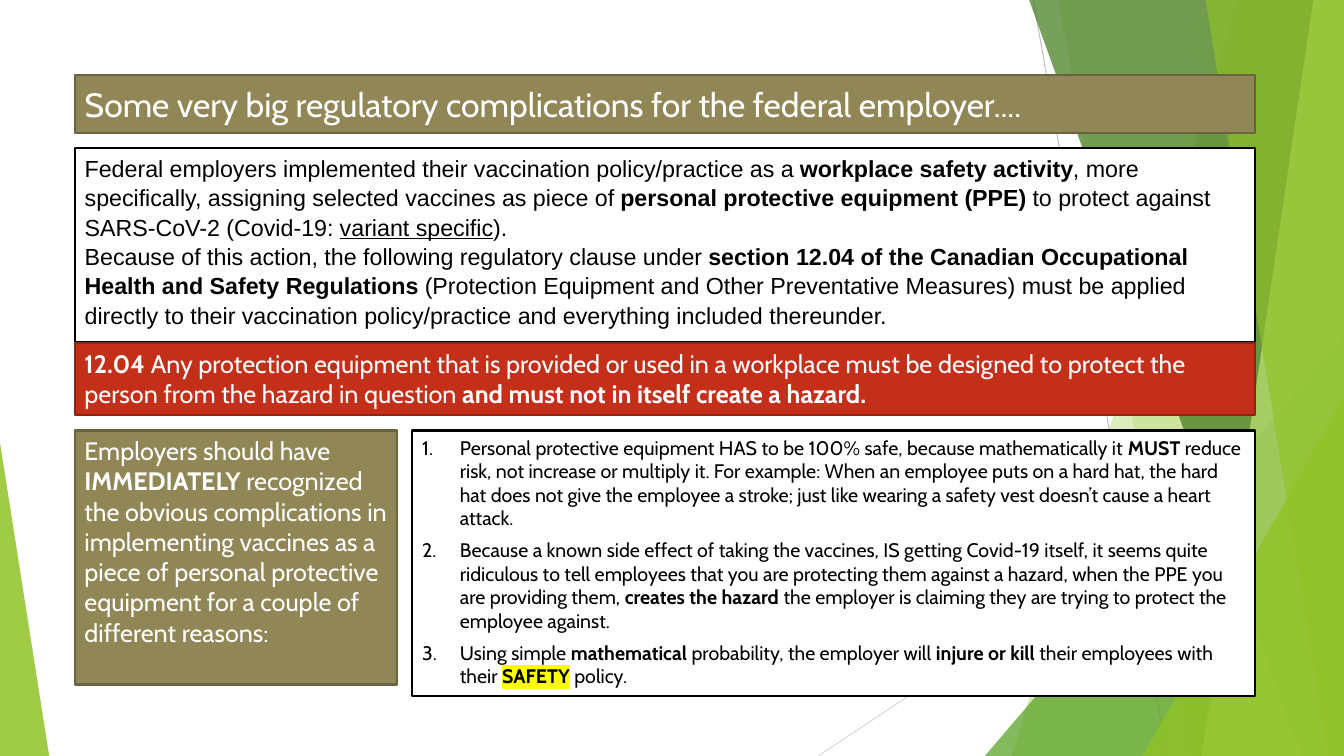
import copy

from lxml import etree
from pptx import Presentation
from pptx import util as u
from pptx.dml.color import RGBColor
from pptx.enum import shapes, text
from pptx.oxml.ns import qn

WHITE = RGBColor(0xFF, 0xFF, 0xFF)
BLACK = RGBColor(0x00, 0x00, 0x00)
OLIVE = RGBColor(0x91, 0x86, 0x55)
DARK_OLIVE = RGBColor(0x6B, 0x63, 0x3F)
RED = RGBColor(0xC4, 0x2F, 0x1A)
DARK_RED = RGBColor(0x91, 0x23, 0x13)
LIME = RGBColor(0x90, 0xC2, 0x26)
PALE_LIME = RGBColor(0xC0, 0xE4, 0x74)
GREEN = RGBColor(0x54, 0xA0, 0x21)
DARK_GREEN = RGBColor(0x3F, 0x78, 0x19)
GREY = RGBColor(0xBF, 0xBF, 0xBF)
LIGHT_GREY = RGBColor(0xD9, 0xD9, 0xD9)

SLIDE_W, SLIDE_H = 33.87, 19.05
LEFT, FULL_W = 1.88, 29.74
LOWER_TOP, REASONS_LEFT = 10.85, 10.39
BREAK = "\n"


class SlideBuilder:
    """Holds the slide and its style; lengths are in centimetres."""

    font = "Cabin"
    border = u.Pt(1.5)

    def __init__(self, slide):
        self.slide = slide
        self.shapes = slide.shapes

    # Background decoration
    def hairline(self, x1, y1, x2, y2, color):
        line = self.shapes.add_connector(
            shapes.MSO_CONNECTOR.STRAIGHT, u.Cm(x1), u.Cm(y1), u.Cm(x2), u.Cm(y2))
        line.line.color.rgb = color
        line.line.width = u.Pt(0.75)
        etree.SubElement(line._element.spPr, qn("a:effectLst"))

    def tint(self, shape, color, opacity):
        shape.fill.solid()
        shape.fill.fore_color.rgb = color
        shape.line.fill.background()
        shape.shadow.inherit = False
        rgb = shape._element.spPr.find(".//" + qn("a:srgbClr"))
        etree.SubElement(rgb, qn("a:alpha"), val=str(opacity * 1000))

    def band(self, top_x, bottom_x, color, opacity):
        """Fill from a slanted left edge to the right side of the slide."""
        outline = self.shapes.build_freeform(u.Cm(top_x), u.Cm(-0.02))
        corners = [(SLIDE_W, -0.02), (SLIDE_W, SLIDE_H), (bottom_x, SLIDE_H)]
        outline.add_line_segments([(u.Cm(x), u.Cm(y)) for x, y in corners])
        self.tint(outline.convert_to_shape(), color, opacity)

    def corner(self, left, top, width, apex, color, opacity):
        """Triangle standing on the bottom edge of the slide."""
        triangle = self.shapes.add_shape(
            shapes.MSO_SHAPE.ISOSCELES_TRIANGLE,
            u.Cm(left), u.Cm(top), u.Cm(width), u.Cm(SLIDE_H - top))
        triangle.adjustments[0] = apex
        self.tint(triangle, color, opacity)

    # Text panels
    def panel(self, left, top, width, height, fill, line, placeholder=None):
        box = [u.Cm(v) for v in (left, top, width, height)]
        if placeholder is None:
            panel = self.shapes.add_shape(shapes.MSO_SHAPE.RECTANGLE, *box)
            panel.shadow.inherit = False
        else:
            panel = placeholder
            panel.left, panel.top, panel.width, panel.height = box
            self.shapes._spTree.append(panel._element)  # above the decoration
        panel.fill.solid()
        panel.fill.fore_color.rgb = fill
        panel.line.color.rgb = line
        panel.line.width = self.border
        frame = panel.text_frame
        frame.word_wrap = True
        frame.auto_size = text.MSO_AUTO_SIZE.NONE
        frame.vertical_anchor = text.MSO_ANCHOR.TOP
        return frame

    def fill_text(self, paragraph, pieces, size, color, font=None):
        """Each piece is plain text, a (text, style) pair or a line break."""
        paragraph.alignment = text.PP_ALIGN.LEFT
        for piece in pieces:
            if piece == BREAK:
                paragraph.add_line_break()
                paragraph._p[-1].append(copy.deepcopy(run._r.rPr))
                continue
            words, style = (piece, "") if isinstance(piece, str) else piece
            run = paragraph.add_run()
            run.text = words
            run.font.name = font or self.font
            run.font.size = u.Pt(size)
            run.font.color.rgb = color
            run.font.bold = style in ("bold", "marked")
            if style == "underlined":
                run.font.underline = True
            if style == "marked":
                self.highlight(run)

    def highlight(self, run):
        mark = etree.Element(qn("a:highlight"))
        etree.SubElement(mark, qn("a:srgbClr"), val="FFFF00")
        run._r.rPr.find(qn("a:solidFill")).addnext(mark)

    def bullet(self, paragraph, indent=0.0, **numbering):
        props = paragraph._p.get_or_add_pPr()
        props.set("marL", str(u.Cm(indent)))
        props.set("indent", str(-u.Cm(indent)))
        etree.SubElement(props, qn("a:buAutoNum" if numbering else "a:buNone"), **numbering)


def main():
    deck = Presentation()
    deck.slide_width, deck.slide_height = u.Cm(SLIDE_W), u.Cm(SLIDE_H)
    slide = deck.slides.add_slide(deck.slide_layouts[1])
    page = SlideBuilder(slide)

    # Green facets
    page.hairline(26.04, 0, 29.41, SLIDE_H, GREY)
    page.hairline(SLIDE_W, 10.24, 20.62, SLIDE_H, LIGHT_GREY)
    page.band(31.19, 25.5, LIME, 30)
    page.band(26.67, 30.05, LIME, 20)
    page.corner(24.82, 8.46, 9.05, 1, GREEN, 72)
    page.band(25.93, 32.79, DARK_GREEN, 70)
    page.band(33.1, 30.28, PALE_LIME, 70)
    page.band(30.38, 33.48, LIME, 65)
    page.corner(28.8, 9.98, 5.07, 1, LIME, 80)
    page.corner(0, 11.15, 1.24, 0, LIME, 85)

    # Background of the policy
    policy = page.panel(LEFT, 3.73, FULL_W, 4.9, WHITE, BLACK, slide.placeholders[1])
    policy_text = policy.paragraphs[0]
    page.fill_text(policy_text, [
        "Federal employers implemented their vaccination policy/practice as a ",
        ("workplace safety activity", "bold"),
        ", more specifically, assigning selected vaccines as piece of ",
        ("personal protective equipment (PPE) ", "bold"),
        "to protect against SARS-CoV-2 (Covid-19: ",
        ("variant specific", "underlined"),
        ").",
        BREAK,
        "Because of this action, the following regulatory clause under ",
        ("section 12.04 of the Canadian Occupational Health and Safety Regulations", "bold"),
        " (Protection Equipment and Other Preventative Measures) must be applied directly "
        "to their vaccination policy/practice and everything included thereunder.",
    ], 16.6, BLACK, "Arial")
    policy_text.space_before = u.Pt(10)
    policy_text.line_spacing = 1.05
    page.bullet(policy_text)

    # Title
    title = page.panel(LEFT, 1.88, FULL_W, 1.47, OLIVE, DARK_OLIVE, slide.shapes.title)
    title.vertical_anchor = text.MSO_ANCHOR.MIDDLE
    page.fill_text(title.paragraphs[0], [
        "Some very big regulatory complications for the federal employer....",
    ], 24, WHITE)

    # Regulatory clause
    clause = page.panel(LEFT, 8.65, FULL_W, 1.81, RED, DARK_RED)
    page.fill_text(clause.paragraphs[0], [
        ("12.04", "bold"),
        " Any protection equipment that is provided or used in a workplace must be "
        "designed to protect the person from the hazard in question ",
        ("and must not in itself create a hazard.", "bold"),
    ], 18, WHITE)

    # Lead-in to the reasons
    lead_in = page.panel(LEFT, LOWER_TOP, 8.13, 6.4, OLIVE, DARK_OLIVE)
    page.fill_text(lead_in.paragraphs[0], [
        "Employers should have ",
        ("IMMEDIATELY", "bold"),
        " recognized the obvious complications in implementing vaccines as a piece of "
        "personal protective equipment for a couple of different reasons:",
    ], 18, WHITE)

    # Numbered reasons
    reasons = page.panel(REASONS_LEFT, LOWER_TOP, LEFT + FULL_W - REASONS_LEFT, 6.68, WHITE, BLACK)
    reason_texts = [
        ["Personal protective equipment HAS to be 100% safe, because mathematically it ",
         ("MUST", "bold"),
         " reduce risk, not increase or multiply it. For example: When an employee puts on "
         "a hard hat, the hard hat does not give the employee a stroke; just like wearing a "
         "safety vest doesn’t cause a heart attack."],
        ["Because a known side effect of taking the vaccines, IS getting Covid-19 itself, it "
         "seems quite ridiculous to tell employees that you are protecting them against a "
         "hazard, when the PPE you are providing them, ",
         ("creates the hazard ", "bold"),
         "the employer is claiming they are trying to protect the employee against."],
        ["Using simple ", ("mathematical ", "bold"),
         "probability, the employer will ", ("injure or kill ", "bold"),
         "their employees with their ", ("SAFETY", "marked"), " policy."],
    ]
    for number, pieces in enumerate(reason_texts):
        reason = reasons.add_paragraph() if number else reasons.paragraphs[0]
        page.fill_text(reason, pieces, 14, BLACK)
        reason.space_before = u.Pt(6)
        page.bullet(reason, 0.95, type="arabicPeriod")

    deck.save("out.pptx")


if __name__ == "__main__":
    main()
